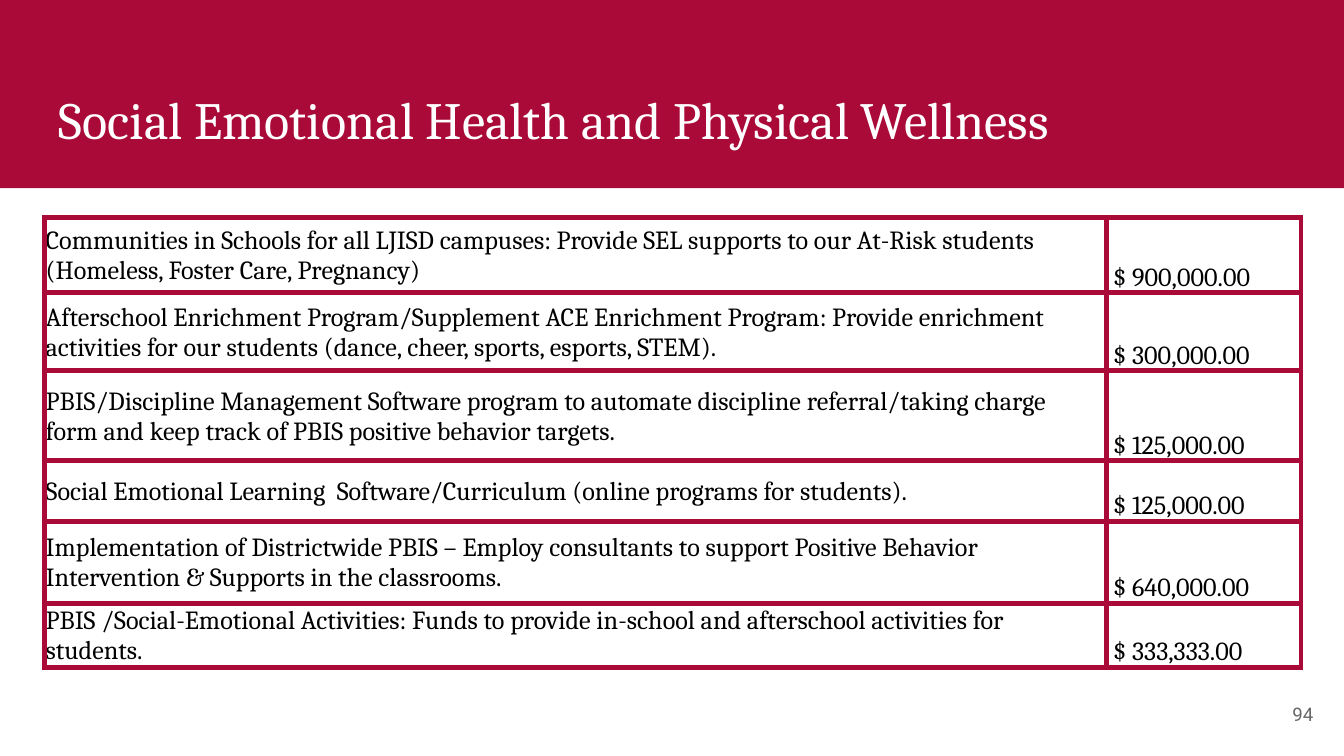
from pptx import Presentation
from pptx.dml.color import RGBColor
from pptx.enum.shapes import MSO_SHAPE
from pptx.enum.text import MSO_ANCHOR, PP_ALIGN
from pptx.util import Inches, Pt
from lxml import etree

RECT = MSO_SHAPE.RECTANGLE
TOP, MIDDLE, BOTTOM = MSO_ANCHOR.TOP, MSO_ANCHOR.MIDDLE, MSO_ANCHOR.BOTTOM
LEFT, RIGHT = PP_ALIGN.LEFT, PP_ALIGN.RIGHT
NS = "http://schemas.openxmlformats.org/drawingml/2006/main"
RED, WHITE, BLACK, GREY = "AA0A38", "FFFFFF", "000000", "666666"
SERIF, SANS = "Cambria", "Roboto"

WIDE = 10
HIGH = WIDE * 9 / 16
COLS = [7.9, 1.45]
ITEMS = [
    (0.56, "Communities in Schools for all LJISD campuses: Provide SEL supports "
           "to our At-Risk students (Homeless, Foster Care, Pregnancy)", "900,000.00"),
    (0.58, "Afterschool Enrichment Program/Supplement ACE Enrichment Program: Provide "
           "enrichment activities for our students (dance, cheer, sports, esports, STEM).",
     "300,000.00"),
    (0.67, "PBIS/Discipline Management Software program to automate discipline "
           "referral/taking charge form and keep track of PBIS positive behavior targets.",
     "125,000.00"),
    (0.45, "Social Emotional Learning  Software/Curriculum (online programs for students).",
     "125,000.00"),
    (0.61, "Implementation of Districtwide PBIS – Employ consultants to support Positive "
           "Behavior Intervention & Supports in the classrooms.", "640,000.00"),
    (0.35, "PBIS /Social-Emotional Activities: Funds to provide in-school and afterschool "
           "activities for students.", "333,333.00"),
]


def color(code):
    return RGBColor.from_string(code)


def write(frame, text, size=14, font=SERIF, ink=BLACK, align=LEFT):
    frame.word_wrap = True
    para = frame.paragraphs[0]
    para.alignment = align
    run = para.add_run()
    run.text = text
    run.font.size = Pt(size)
    run.font.name = font
    run.font.color.rgb = color(ink)


def add_band(slide, box, fill):
    band = slide.shapes.add_shape(RECT, *map(Inches, box))
    band.shadow.inherit = False
    band.fill.solid()
    band.fill.fore_color.rgb = color(fill)
    band.line.fill.background()


def add_text(slide, box, text, anchor=TOP, **style):
    frame = slide.shapes.add_textbox(*map(Inches, box)).text_frame
    frame.margin_left = frame.margin_right = Inches(0.1)
    frame.margin_top = frame.margin_bottom = Inches(0.1)
    frame.vertical_anchor = anchor
    write(frame, text, **style)


def set_edges(cell, code, width):
    props = cell._tc.get_or_add_tcPr()
    for spot, side in enumerate(("lnL", "lnR", "lnT", "lnB")):
        line = etree.Element(f"{{{NS}}}{side}", w=str(Pt(width)))
        fill = etree.SubElement(line, f"{{{NS}}}solidFill")
        etree.SubElement(fill, f"{{{NS}}}srgbClr", val=code)
        props.insert(spot, line)


def fill_cell(cell, text, anchor):
    cell.margin_left = cell.margin_right = cell.margin_top = Inches(0.01)
    cell.margin_bottom = 0
    cell.vertical_anchor = anchor
    cell.fill.background()
    set_edges(cell, RED, 3)
    write(cell.text_frame, text)


def add_budget(slide, left, top):
    high = sum(item[0] for item in ITEMS)
    box = map(Inches, (left, top, sum(COLS), high))
    table = slide.shapes.add_table(len(ITEMS), len(COLS), *box).table
    table.first_row = table.horz_banding = False
    for col, width in zip(table.columns, COLS):
        col.width = Inches(width)
    for row, (height, label, cost) in zip(table.rows, ITEMS):
        row.height = Inches(height)
        fill_cell(row.cells[0], label, MIDDLE)
        fill_cell(row.cells[1], f" $ {cost}", BOTTOM)


def main():
    deck = Presentation()
    deck.slide_width, deck.slide_height = Inches(WIDE), Inches(HIGH)
    slide = deck.slides.add_slide(deck.slide_layouts[6])
    add_band(slide, (0, 0, WIDE, 1.4), RED)
    add_text(slide, (0.34, 0.55, 9.32, 0.68),
             "Social Emotional Health and Physical Wellness", size=28, ink=WHITE)
    add_budget(slide, 0.33, 1.62)
    add_text(slide, (9.27, 5.1, 0.6, 0.43), "94", anchor=MIDDLE,
             size=10, font=SANS, ink=GREY, align=RIGHT)
    deck.save("out.pptx")


if __name__ == "__main__":
    main()
